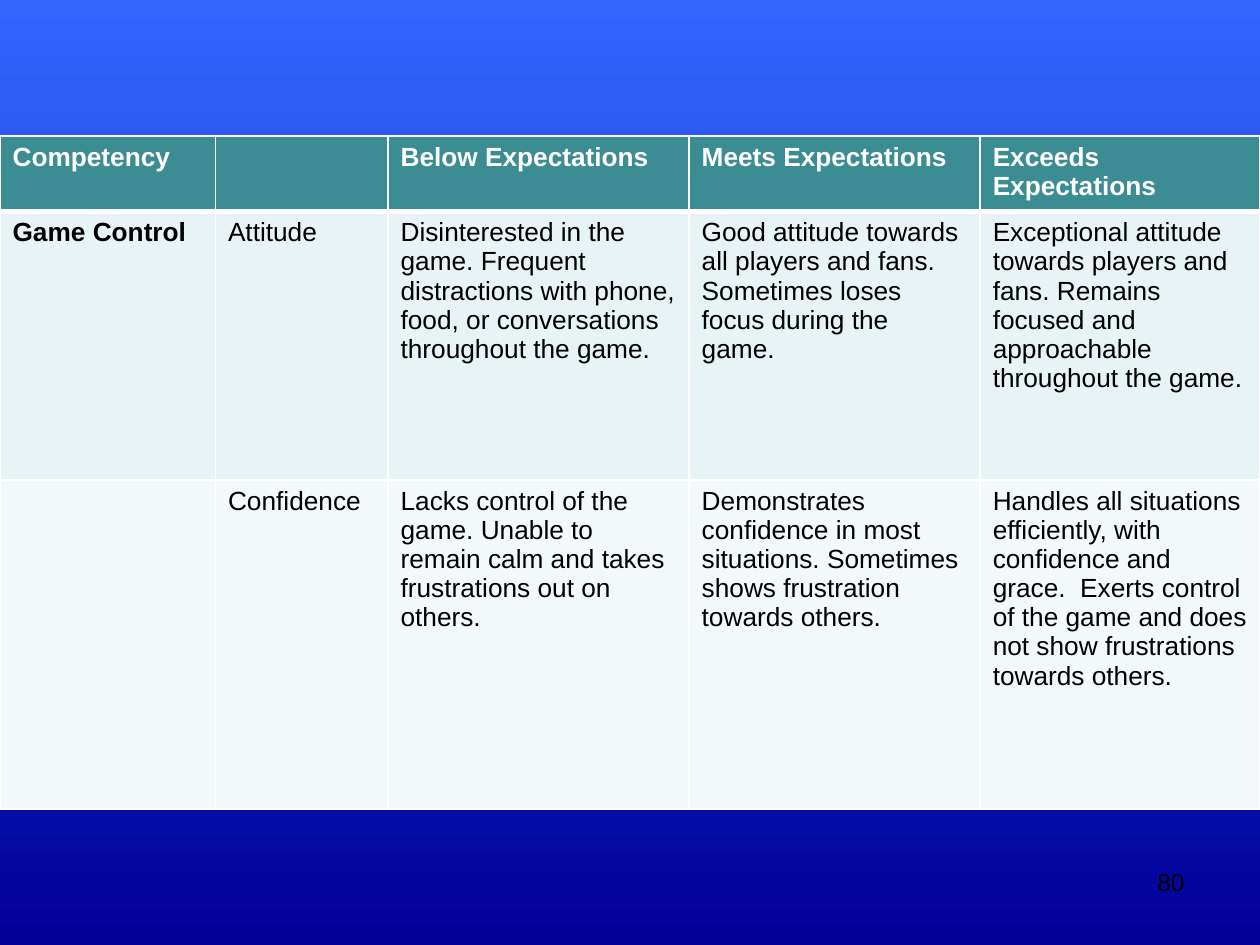
from dataclasses import dataclass

from lxml.etree import SubElement
from pptx import Presentation
from pptx.dml.color import RGBColor as RGB
from pptx.enum.text import PP_ALIGN as Align
from pptx.oxml.ns import qn
from pptx.util import Inches, Pt


@dataclass(frozen=True)
class Theme:
    font: str = "Arial"
    sky: str = "3366FF"
    navy: str = "000099"
    white: str = "FFFFFF"
    black: str = "000000"
    row_fills: tuple = ("3C8C93", "E7F3F4", "F3F9FA")
    table_size: int = 15
    number_size: int = 14


THEME = Theme()


def add_run(paragraph, text, size, color, bold=False):
    run = paragraph.add_run()
    run.text = text
    run.font.name = THEME.font
    run.font.size = Pt(size)
    run.font.bold = bold
    run.font.color.rgb = RGB.from_string(color)


def add_border(cell, side, width):
    line = SubElement(cell._tc.get_or_add_tcPr(), qn(f"a:ln{side}"), w=str(Pt(width)))
    fill = SubElement(line, qn("a:solidFill"))
    SubElement(fill, qn("a:srgbClr"), val=THEME.white)


prs = Presentation()
prs.slide_width, prs.slide_height = Inches(10), Inches(7.5)
slide = prs.slides.add_slide(prs.slide_layouts[6])

# Background, light at the top and dark at the bottom
backdrop = slide.background.fill
backdrop.gradient()
backdrop.gradient_angle = 270
for stop, color, position in zip(backdrop.gradient_stops, (THEME.sky, THEME.navy), (0, 1)):
    stop.color.rgb = RGB.from_string(color)
    stop.position = position

# Page number
page_number = slide.shapes.add_textbox(
    Inches(7.17), Inches(6.83), Inches(2.33), Inches(0.52)).text_frame
page_number.word_wrap = True
page_number.paragraphs[0].alignment = Align.RIGHT
add_run(page_number.paragraphs[0], "80", THEME.number_size, THEME.black)

# Competency rubric
rubric = [
    ["Competency", "", "Below Expectations", "Meets Expectations", "Exceeds Expectations"],
    ["Game Control", "Attitude",
     "Disinterested in the game. Frequent distractions with phone, food, "
     "or conversations throughout the game.",
     "Good attitude towards all players and fans.  Sometimes loses focus during the game.",
     "Exceptional attitude towards players and fans. Remains focused and "
     "approachable throughout the game."],
    ["", "Confidence",
     "Lacks control of the game. Unable to remain calm and takes frustrations out on others.",
     "Demonstrates confidence in most situations. Sometimes shows frustration towards others.",
     "Handles all situations efficiently, with confidence and grace.  Exerts control "
     "of the game and does not show frustrations towards others."],
]
column_widths = [1.71, 1.37, 2.39, 2.31, 2.22]
row_heights = [0.55, 2.13, 2.61]

table = slide.shapes.add_table(
    len(rubric), len(column_widths), Inches(0), Inches(1.08),
    Inches(sum(column_widths)), Inches(sum(row_heights))).table
for column, width in zip(table.columns, column_widths):
    column.width = Inches(width)

for r, (texts, height, row_fill) in enumerate(zip(rubric, row_heights, THEME.row_fills)):
    table.rows[r].height = Inches(height)
    header = r == 0
    for c, text in enumerate(texts):
        cell = table.cell(r, c)
        # Borders come before the fill in the cell properties
        for side in "LRTB":
            heavy = (header and side == "B") or (r == 1 and side == "T")
            add_border(cell, side, 3 if heavy else 1)
        cell.fill.solid()
        cell.fill.fore_color.rgb = RGB.from_string(row_fill)
        if text:
            add_run(cell.text_frame.paragraphs[0], text, THEME.table_size,
                    THEME.white if header else THEME.black, bold=header or c == 0)

prs.save("out.pptx")
